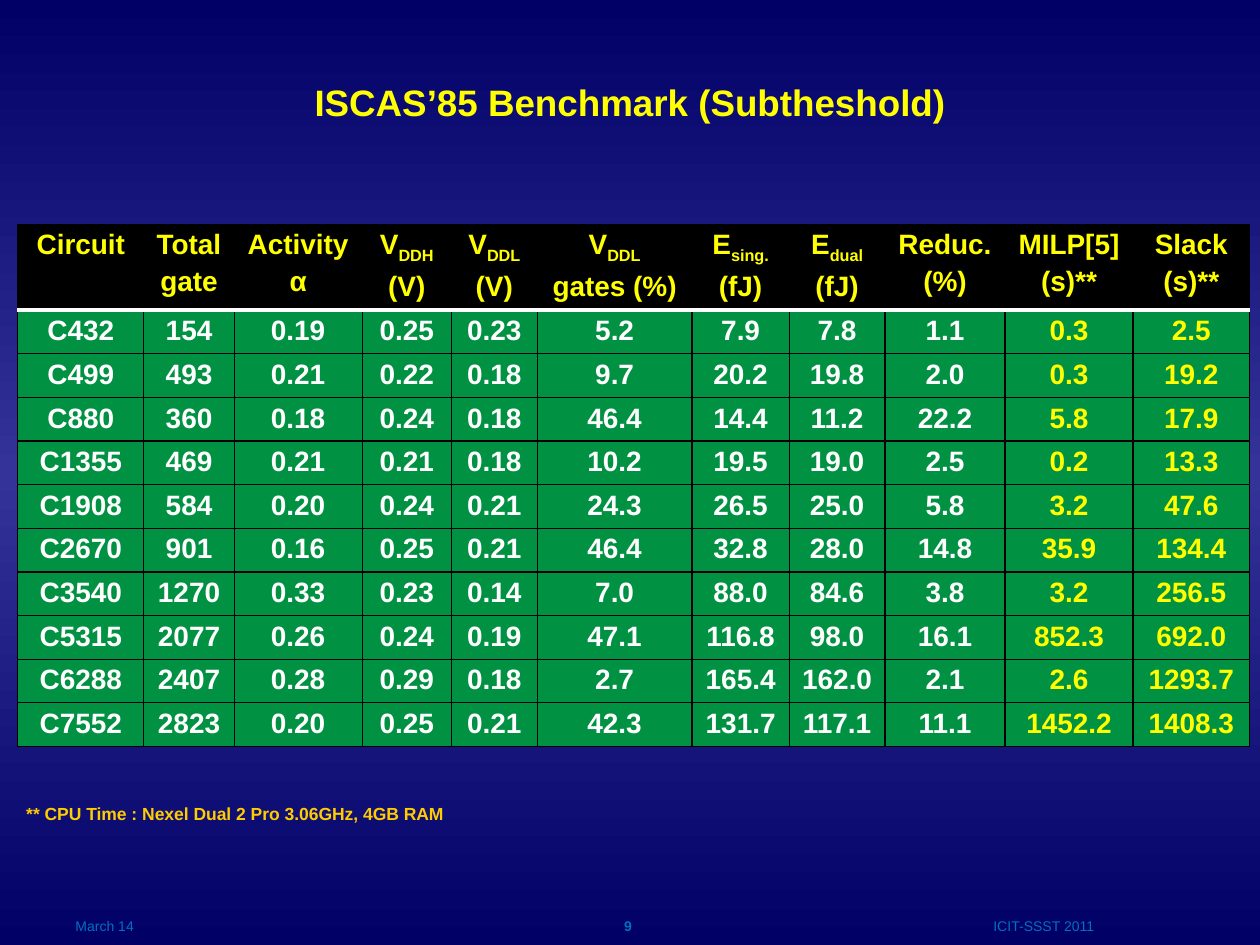
from copy import deepcopy
from dataclasses import dataclass

from lxml.etree import SubElement
from pptx import Presentation
from pptx.dml.color import RGBColor
from pptx.enum.text import MSO_ANCHOR as Anchor, PP_ALIGN as Align
from pptx.oxml.ns import qn
from pptx.util import Cm, Pt

YELLOW, WHITE, BLACK = "FFFF00", "FFFFFF", "000000"
GREEN, BLUE, GOLD = "009242", "0070C0", "FFCC00"

# Header lines; text after "_" in a line is a subscript.
HEADERS = [
    ("Circuit",), ("Total", "gate"), ("Activity", "α"), ("V_DDH", "(V)"),
    ("V_DDL", "(V)"), ("V_DDL", "gates (%)"), ("E_sing.", "(fJ)"),
    ("E_dual", "(fJ)"), ("Reduc.", "(%)"), ("MILP[5]", "(s)**"),
    ("Slack", "(s)**"),
]
COLUMN_WIDTHS = [2.54, 1.82, 2.58, 1.8, 1.73, 3.12, 1.96, 1.93, 2.42, 2.58, 2.35]
HEADER_HEIGHT, ROW_HEIGHT = 1.73, 0.88
FIRST_TIME_COLUMN = 9
RESULTS = """
C432 154 0.19 0.25 0.23 5.2 7.9 7.8 1.1 0.3 2.5
C499 493 0.21 0.22 0.18 9.7 20.2 19.8 2.0 0.3 19.2
C880 360 0.18 0.24 0.18 46.4 14.4 11.2 22.2 5.8 17.9
C1355 469 0.21 0.21 0.18 10.2 19.5 19.0 2.5 0.2 13.3
C1908 584 0.20 0.24 0.21 24.3 26.5 25.0 5.8 3.2 47.6
C2670 901 0.16 0.25 0.21 46.4 32.8 28.0 14.8 35.9 134.4
C3540 1270 0.33 0.23 0.14 7.0 88.0 84.6 3.8 3.2 256.5
C5315 2077 0.26 0.24 0.19 47.1 116.8 98.0 16.1 852.3 692.0
C6288 2407 0.28 0.29 0.18 2.7 165.4 162.0 2.1 2.6 1293.7
C7552 2823 0.20 0.25 0.21 42.3 131.7 117.1 11.1 1452.2 1408.3
"""


@dataclass
class Label:
    text: str
    left: float
    top: float
    width: float
    height: float
    inset_top: float
    size: float
    color: str
    bold: bool = False
    align: Align = Align.LEFT


LABELS = [
    Label("** CPU Time : Nexel Dual 2 Pro 3.06GHz, 4GB RAM",
          0.28, 15.6, 15.9, 1.02, 0.58, 10, GOLD, bold=True),
    Label("March 14", 1.27, 18.03, 5.92, 1.02, 0.46, 8, BLUE),
    Label("ICIT-SSST 2011", 17.02, 18.03, 8.05, 1.02, 0.46, 8, BLUE,
          align=Align.CENTER),
    Label("9", 9.7, 18.03, 5.92, 1.02, 0.46, 8, BLUE, bold=True,
          align=Align.CENTER),
]


def rgb(color: str) -> RGBColor:
    return RGBColor.from_string(color)


def write(tf, text: str, *, size: float, color: str, bold: bool = False,
          align: Align = Align.LEFT, space_before: float = 0) -> None:
    """Fill a text frame, one paragraph a line, with "_" before a subscript."""
    for i, line in enumerate(text.split("\n")):
        p = tf.add_paragraph() if i else tf.paragraphs[0]
        p.alignment = align
        p.space_before = Pt(space_before)
        for j, part in enumerate(line.split("_")):
            r = p.add_run()
            r.text = part
            r.font.name = "Arial"
            r.font.size = Pt(size)
            r.font.bold = bold
            r.font.color.rgb = rgb(color)
            if j:
                r.font._element.set("baseline", "-25000")


def set_background(s) -> None:
    fill = s.background.fill
    fill.gradient()
    fill.gradient_angle = 270
    stops = fill._fill._gradFill.find(qn("a:gsLst"))
    stops.append(deepcopy(stops[0]))
    colors = ["000066", "333399", "000066"]
    for i, (stop, color) in enumerate(zip(fill.gradient_stops, colors)):
        stop.position = i / 2
        stop.color.rgb = rgb(color)


def set_border(cell, side: str, color: str, width: float) -> None:
    ln = SubElement(cell._tc.get_or_add_tcPr(), qn(f"a:ln{side}"), w=str(Pt(width)))
    SubElement(SubElement(ln, qn("a:solidFill")), qn("a:srgbClr"), val=color)


def format_cell(cell, text: str, fill: str, color: str,
                borders: dict[str, tuple[str, float]]) -> None:
    cell.margin_left = cell.margin_right = Cm(0.1)
    cell.margin_top = cell.margin_bottom = Cm(0.11)
    write(cell.text_frame, text, size=16, color=color, bold=True,
          align=Align.CENTER, space_before=3.2)
    for side, (line_color, width) in borders.items():
        set_border(cell, side, line_color, width)
    cell.fill.solid()
    cell.fill.fore_color.rgb = rgb(fill)


def add_results_table(s) -> None:
    rows = [line.split() for line in RESULTS.strip().splitlines()]
    height = HEADER_HEIGHT + ROW_HEIGHT * len(rows)
    table = s.shapes.add_table(len(rows) + 1, len(HEADERS), Cm(0.36), Cm(4.52),
                               Cm(sum(COLUMN_WIDTHS)), Cm(height)).table
    for column, width in zip(table.columns, COLUMN_WIDTHS):
        column.width = Cm(width)
    for i, row in enumerate(table.rows):
        row.height = Cm(ROW_HEIGHT if i else HEADER_HEIGHT)

    thin, rule = (BLACK, 0.75), (WHITE, 3)
    grid = dict.fromkeys("LRTB", thin)
    for c, lines in enumerate(HEADERS):
        format_cell(table.cell(0, c), "\n".join(lines), BLACK, YELLOW,
                    grid | {"B": rule})
    for r, values in enumerate(rows, 1):
        borders = grid | {"T": rule} if r == 1 else grid
        for c, value in enumerate(values):
            color = YELLOW if c >= FIRST_TIME_COLUMN else WHITE
            format_cell(table.cell(r, c), value, GREEN, color, borders)


def add_title(s, text: str) -> None:
    sp = s.shapes.title
    sp.left, sp.top, sp.width, sp.height = Cm(1.27), Cm(0), Cm(22.86), Cm(3.18)
    tf = sp.text_frame
    tf.vertical_anchor = Anchor.MIDDLE
    tf.margin_top = Cm(1.06)
    write(tf, text, size=21, color=YELLOW, bold=True, align=Align.CENTER)


def add_label(s, label: Label) -> None:
    sp = s.shapes.add_textbox(Cm(label.left), Cm(label.top),
                              Cm(label.width), Cm(label.height))
    tf = sp.text_frame
    tf.word_wrap = True
    tf.margin_top = Cm(label.inset_top)
    write(tf, label.text, size=label.size, color=label.color,
          bold=label.bold, align=label.align)


def main() -> None:
    prs = Presentation()
    prs.slide_width, prs.slide_height = Cm(25.4), Cm(19.05)
    s = prs.slides.add_slide(prs.slide_layouts[5])
    set_background(s)
    add_title(s, "ISCAS’85 Benchmark (Subtheshold)")
    add_results_table(s)
    for label in LABELS:
        add_label(s, label)
    prs.save("out.pptx")


if __name__ == "__main__":
    main()
